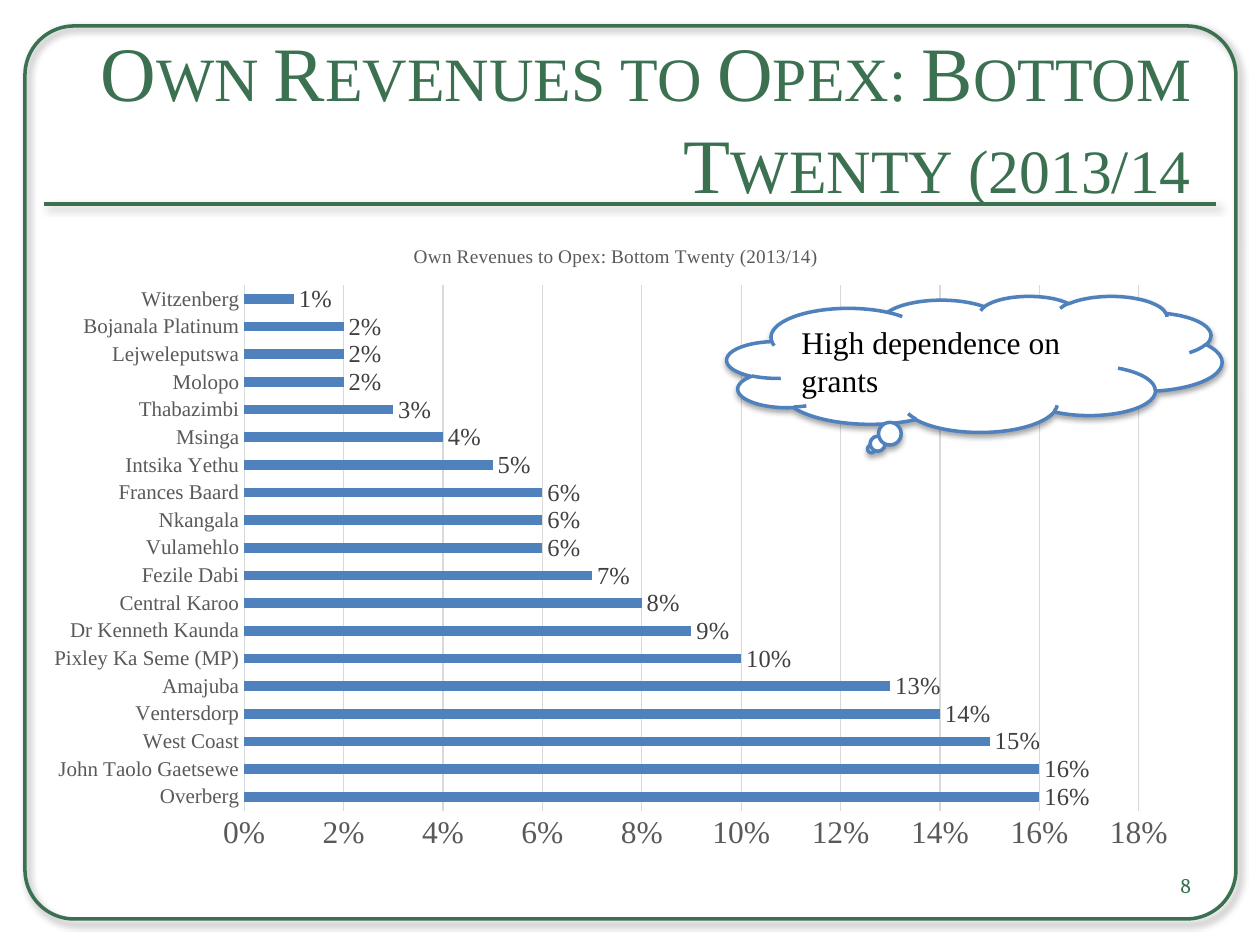
"""Build the slide on own revenues to operating expenditure."""
from lxml.etree import SubElement
from pptx import Presentation
from pptx.chart.data import CategoryChartData
from pptx.dml.color import RGBColor
from pptx.enum.chart import XL_CHART_TYPE as ChartType, XL_LABEL_POSITION as LabelPosition
from pptx.enum.chart import XL_TICK_MARK as TickMark
from pptx.enum.shapes import MSO_CONNECTOR as Connector, MSO_SHAPE as Preset
from pptx.enum.text import MSO_ANCHOR as Anchor, MSO_AUTO_SIZE as AutoSize, PP_ALIGN as Align
from pptx.oxml.ns import qn
from pptx.util import Emu, Inches, Pt

GREEN = RGBColor(0x3B, 0x71, 0x50)
BLUE = RGBColor(0x4F, 0x81, 0xBD)
WHITE = RGBColor(0xFF, 0xFF, 0xFF)
BLACK = RGBColor(0, 0, 0)
DARK = RGBColor(0x40, 0x40, 0x40)
GREY = RGBColor(0x59, 0x59, 0x59)
PALE = RGBColor(0xD9, 0xD9, 0xD9)

SERIF = "Times New Roman"
REVENUE_SHARES = {
    "Overberg": 0.16,
    "John Taolo Gaetsewe": 0.16,
    "West Coast": 0.15,
    "Ventersdorp": 0.14,
    "Amajuba": 0.13,
    "Pixley Ka Seme (MP)": 0.10,
    "Dr Kenneth Kaunda": 0.09,
    "Central Karoo": 0.08,
    "Fezile Dabi": 0.07,
    "Vulamehlo": 0.06,
    "Nkangala": 0.06,
    "Frances Baard": 0.06,
    "Intsika Yethu": 0.05,
    "Msinga": 0.04,
    "Thabazimbi": 0.03,
    "Molopo": 0.02,
    "Lejweleputswa": 0.02,
    "Bojanala Platinum": 0.02,
    "Witzenberg": 0.01,
}


def px(length):
    """Turn pixels into EMU."""
    return Emu(round(length * 914400 / 126))


def set_font(font, size, color, name=SERIF):
    """Set the size, colour and typeface of a font."""
    font.size = Pt(size)
    font.name = name
    font.bold = False
    font.color.rgb = color


def set_line(line, color, width=2):
    """Set the colour and width of a line."""
    line.color.rgb = color
    line.width = Pt(width)


def add_shadow(shape, alpha, blur, distance, angle):
    """Give a shape or connector an outer shadow."""
    properties = shape._element.spPr
    effects = properties.find(qn("a:effectLst"))
    if effects is None:
        effects = SubElement(properties, qn("a:effectLst"))
    shadow = SubElement(effects, qn("a:outerShdw"), blurRad=str(Pt(blur)),
                        dist=str(Pt(distance)), dir=str(angle * 60000), rotWithShape="0")
    color = SubElement(shadow, qn("a:srgbClr"), val=str(BLACK))
    SubElement(color, qn("a:alpha"), val=str(alpha * 1000))


class SlideBuilder:
    """Hold the current slide and add styled elements to it."""

    def __init__(self, slide):
        """Keep the slide to build on."""
        self.slide = slide
        self.shapes = slide.shapes

    def set_text(self, shape, text, size, color, align, name=SERIF):
        """Fill a shape with one styled paragraph and return it."""
        frame = shape.text_frame
        frame.text = text
        frame.word_wrap = True
        frame.auto_size = AutoSize.NONE
        frame.vertical_anchor = Anchor.MIDDLE
        frame.margin_left = frame.margin_right = Inches(0.05)
        frame.margin_top = frame.margin_bottom = Inches(0.05)
        paragraph = frame.paragraphs[0]
        paragraph.alignment = align
        set_font(paragraph.font, size, color, name)
        return paragraph

    def title(self, text, left, top, width, height):
        """Place the title in small capitals."""
        title = self.shapes.title
        title.left, title.top = px(left), px(top)
        title.width, title.height = px(width), px(height)
        paragraph = self.set_text(title, text, 44, GREEN, Align.RIGHT)
        paragraph.font._element.set("cap", "small")

    def shape(self, preset, left, top, width, height, color):
        """Add an unfilled outlined shape."""
        shape = self.shapes.add_shape(preset, px(left), px(top), px(width), px(height))
        shape.shadow.inherit = False
        shape.fill.background()
        set_line(shape.line, color)
        return shape

    def frame(self, left, top, width, height):
        """Add the rounded slide border."""
        border = self.shape(Preset.ROUNDED_RECTANGLE, left, top, width, height, GREEN)
        border.adjustments[0] = 0.055
        add_shadow(border, 40, 4, 3, 45)

    def rule(self, left, right, y):
        """Add the horizontal rule below the title."""
        rule = self.shapes.add_connector(Connector.STRAIGHT, px(left), px(y), px(right), px(y))
        set_line(rule.line, GREEN)
        add_shadow(rule, 40, 4, 3, 45)

    def callout(self, text, left, top, width, height):
        """Add a thought cloud."""
        cloud = self.shape(Preset.CLOUD_CALLOUT, left, top, width, height, BLUE)
        cloud.fill.solid()
        cloud.fill.fore_color.rgb = WHITE
        add_shadow(cloud, 35, 3, 1.8, 90)
        self.set_text(cloud, text, 18, BLACK, Align.LEFT)

    def page_number(self, text, left, top, width, height):
        """Add the page number."""
        box = self.shapes.add_textbox(px(left), px(top), px(width), px(height))
        self.set_text(box, text, 12, GREEN, Align.RIGHT, "Cambria")

    def bar_chart(self, title, shares, left, top, width, height):
        """Add a horizontal bar chart of percentages."""
        data = CategoryChartData(number_format="0%")
        data.categories = list(shares)
        data.add_series("Series 1", list(shares.values()))
        chart = self.shapes.add_chart(ChartType.BAR_CLUSTERED, px(left), px(top),
                                      px(width), px(height), data).chart
        set_font(chart.font, 10.5, BLACK)
        chart.has_legend = False
        chart.has_title = True
        chart.chart_title.include_in_layout = False
        heading = chart.chart_title.text_frame
        heading.text = title
        set_font(heading.paragraphs[0].font, 11, GREY)
        self.style_axes(chart)
        self.style_bars(chart.plots[0])
        self.place_plot(chart, x=0.18, y=0.1, w=0.77, h=0.82)

    def style_axes(self, chart):
        """Format both axes and the gridlines."""
        for axis, size in ((chart.category_axis, 12), (chart.value_axis, 18)):
            axis.major_tick_mark = axis.minor_tick_mark = TickMark.NONE
            set_font(axis.tick_labels.font, size, GREY)
        chart.category_axis.has_major_gridlines = False
        set_line(chart.category_axis.format.line, PALE, 0.75)
        values = chart.value_axis
        values.minimum_scale, values.maximum_scale, values.major_unit = 0, 0.18, 0.02
        values.format.line.fill.background()
        values.has_major_gridlines = True
        set_line(values.major_gridlines.format.line, PALE, 0.75)
        values.tick_labels.number_format = "0%"
        values.tick_labels.number_format_is_linked = False

    def style_bars(self, plot):
        """Format the bars and their labels."""
        plot.gap_width = 182
        plot.vary_by_categories = False
        bars = plot.series[0]
        bars.format.fill.solid()
        bars.format.fill.fore_color.rgb = BLUE
        labels = bars.data_labels
        labels.show_value = True
        labels.number_format = "0%"
        labels.number_format_is_linked = False
        labels.position = LabelPosition.OUTSIDE_END
        set_font(labels.font, 14, DARK)

    def place_plot(self, chart, **fractions):
        """Fix the inner plot area as fractions of the chart."""
        area = chart._chartSpace.find(f".//{qn('c:plotArea')}")
        layout = area.find(qn("c:layout"))
        if layout is None:
            layout = SubElement(area, qn("c:layout"))
            area.insert(0, layout)
        manual = SubElement(layout, qn("c:manualLayout"))
        settings = {"layoutTarget": "inner", "xMode": "edge", "yMode": "edge", **fractions}
        for name, value in settings.items():
            SubElement(manual, qn(f"c:{name}"), val=str(value))


def main():
    """Build and save the presentation."""
    presentation = Presentation()
    presentation.slide_width, presentation.slide_height = Inches(10), Inches(7.5)
    builder = SlideBuilder(presentation.slides.add_slide(presentation.slide_layouts[5]))
    builder.frame(25, 26, 1211, 893)
    builder.rule(44, 1216, 204)
    builder.title("Own Revenues to Opex: Bottom Twenty (2013/14", 63, 13, 1134, 208)
    builder.bar_chart("Own Revenues to Opex: Bottom Twenty (2013/14)", REVENUE_SHARES,
                      35, 221, 1162, 641)
    builder.page_number("8", 903, 866, 294, 38)
    builder.callout("High dependence on grants", 727, 296, 495, 136)
    presentation.save("out.pptx")


if __name__ == "__main__":
    main()
